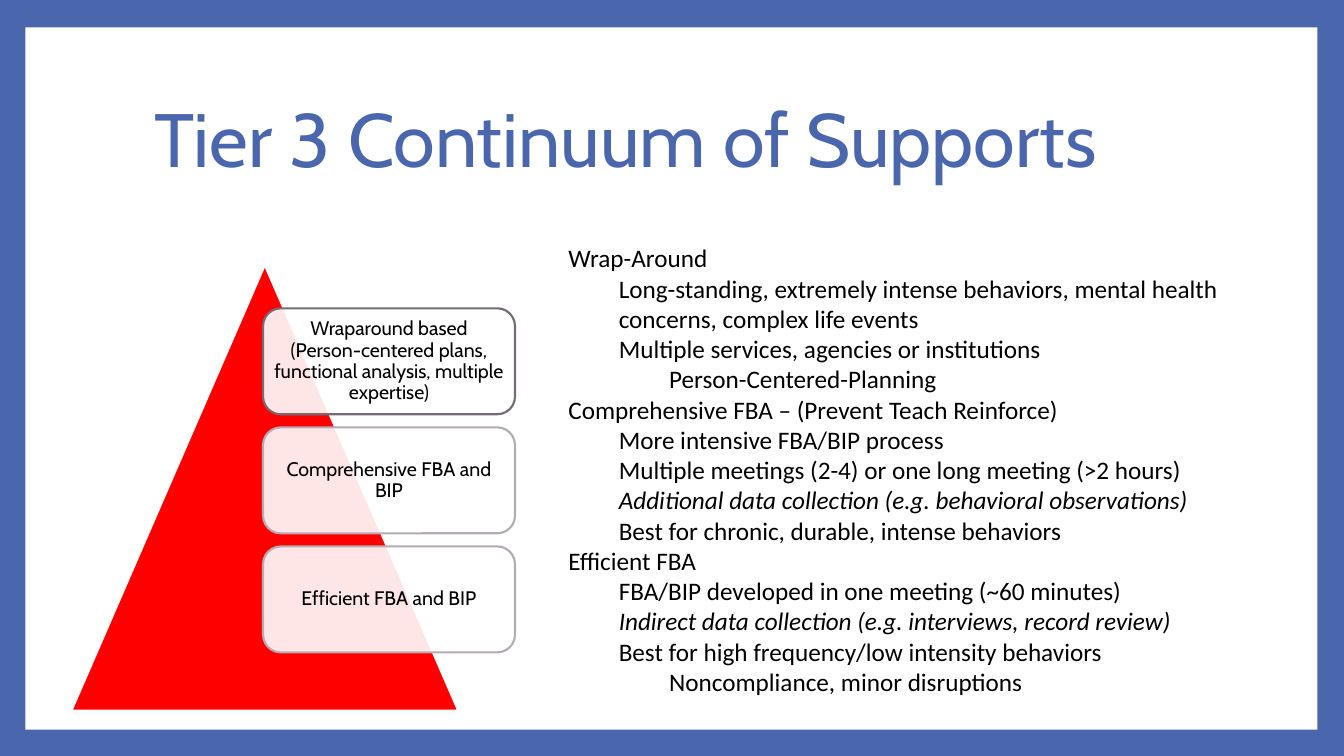
from lxml import etree
from pptx import Presentation
from pptx.dml.color import RGBColor
from pptx.enum.shapes import MSO_SHAPE
from pptx.enum.text import MSO_ANCHOR, MSO_AUTO_SIZE, PP_ALIGN
from pptx.oxml.ns import qn
from pptx.util import Cm, Pt


def color(value):
    return RGBColor.from_string(value)


def apply(target, values):
    for name, value in values.items():
        setattr(target, name, value)


presentation = Presentation()
apply(presentation, {"slide_width": Cm(33.87), "slide_height": Cm(19.05)})
slide = presentation.slides.add_slide(presentation.slide_layouts[1])
title, body = slide.placeholders

# Blue frame around a white panel
slide.background.fill.solid()
slide.background.fill.fore_color.rgb = color("4A66AC")
panel = slide.shapes.add_shape(
    MSO_SHAPE.RECTANGLE, Cm(0.64), Cm(0.69), Cm(32.56), Cm(17.7))
panel.shadow.inherit = False
panel.fill.solid()
panel.fill.fore_color.rgb = color("FFFFFF")
panel.line.fill.background()
title.element.addprevious(panel.element)

# Title
apply(title, {"left": Cm(3.63), "top": Cm(2.46), "width": Cm(27), "height": Cm(2.29)})
title.text_frame.text = "Tier 3 Continuum of Supports"
apply(title.text_frame, {"auto_size": MSO_AUTO_SIZE.NONE,
                         "vertical_anchor": MSO_ANCHOR.MIDDLE})
paragraph = title.text_frame.paragraphs[0]
apply(paragraph, {"alignment": PP_ALIGN.LEFT, "line_spacing": 0.9})
apply(paragraph.font, {"name": "Cabin", "size": Pt(54)})
paragraph.font.color.rgb = color("4A66AC")

# Outline of supports: level, text, italic
outline = [
    (0, "Wrap-Around", False),
    (1, "Long-standing, extremely intense behaviors, mental health concerns, "
        "complex life events", False),
    (1, "Multiple services, agencies or institutions", False),
    (2, "Person-Centered-Planning", False),
    (0, "Comprehensive FBA – (Prevent Teach Reinforce)", False),
    (1, "More intensive FBA/BIP process", False),
    (1, "Multiple meetings (2-4) or one long meeting (>2 hours)", False),
    (1, "Additional data collection (e.g. behavioral observations)", True),
    (1, "Best for chronic, durable, intense behaviors", False),
    (0, "Efficient FBA", False),
    (1, "FBA/BIP developed in one meeting (~60 minutes)", False),
    (1, "Indirect data collection (e.g. interviews, record review)", True),
    (1, "Best for high frequency/low intensity behaviors", False),
    (2, "Noncompliance, minor disruptions", False),
]
apply(body, {"left": Cm(14.07), "top": Cm(5.99), "width": Cm(16.94), "height": Cm(12.57)})
body.text_frame.text = "\n".join(text for level, text, italic in outline)
apply(body.text_frame, {"auto_size": MSO_AUTO_SIZE.NONE,
                        "vertical_anchor": MSO_ANCHOR.TOP})
for paragraph, (level, text, italic) in zip(body.text_frame.paragraphs, outline):
    apply(paragraph, {"level": level, "space_before": Pt(0), "line_spacing": 1.0})
    run = paragraph.runs[0]
    apply(run.font, {"name": "Calibri", "size": Pt(18), "italic": italic})
    run.font.color.rgb = color("000000")
    properties = paragraph._p.get_or_add_pPr()
    properties.set("marL", str(Cm(1.27 * level)))
    properties.set("indent", "0")
    etree.SubElement(properties, qn("a:buNone"))

# Red pyramid
pyramid = slide.shapes.add_shape(
    MSO_SHAPE.ISOSCELES_TRIANGLE, Cm(1.8), Cm(6.68), Cm(9.75), Cm(11.23))
pyramid.shadow.inherit = False
pyramid.fill.solid()
pyramid.fill.fore_color.rgb = color("FF0000")
pyramid.line.color.rgb = color("FFFFFF")
pyramid.line.width = Pt(1.5)

# Translucent tier cards, evenly spaced
tiers = [
    ("Wraparound based (Person-centered plans, functional analysis, "
     "multiple expertise)", "746B76"),
    ("Comprehensive FBA and BIP", "B4ACB5"),
    ("Efficient FBA and BIP", "B4ACB5"),
]
for index, (text, outline_color) in enumerate(tiers):
    card = slide.shapes.add_shape(
        MSO_SHAPE.ROUNDED_RECTANGLE, Cm(6.63), Cm(7.77 + 3 * index), Cm(6.35), Cm(2.67))
    card.shadow.inherit = False
    card.fill.solid()
    card.fill.fore_color.rgb = color("FFFFFF")
    fill_color = card.element.spPr.find(qn("a:solidFill"))[0]
    etree.SubElement(fill_color, qn("a:alpha"), val="90000")
    card.line.color.rgb = color(outline_color)
    card.line.width = Pt(1.5)
    frame = card.text_frame
    frame.text = text
    apply(frame, {"word_wrap": True, "vertical_anchor": MSO_ANCHOR.MIDDLE,
                  "margin_left": Cm(0.15), "margin_right": Cm(0.15),
                  "margin_top": Cm(0.15), "margin_bottom": Cm(0.15)})
    paragraph = frame.paragraphs[0]
    apply(paragraph, {"alignment": PP_ALIGN.CENTER, "line_spacing": 0.9})
    apply(paragraph.font, {"name": "Cabin", "size": Pt(14)})
    paragraph.font.color.rgb = color("000000")

presentation.save("out.pptx")
